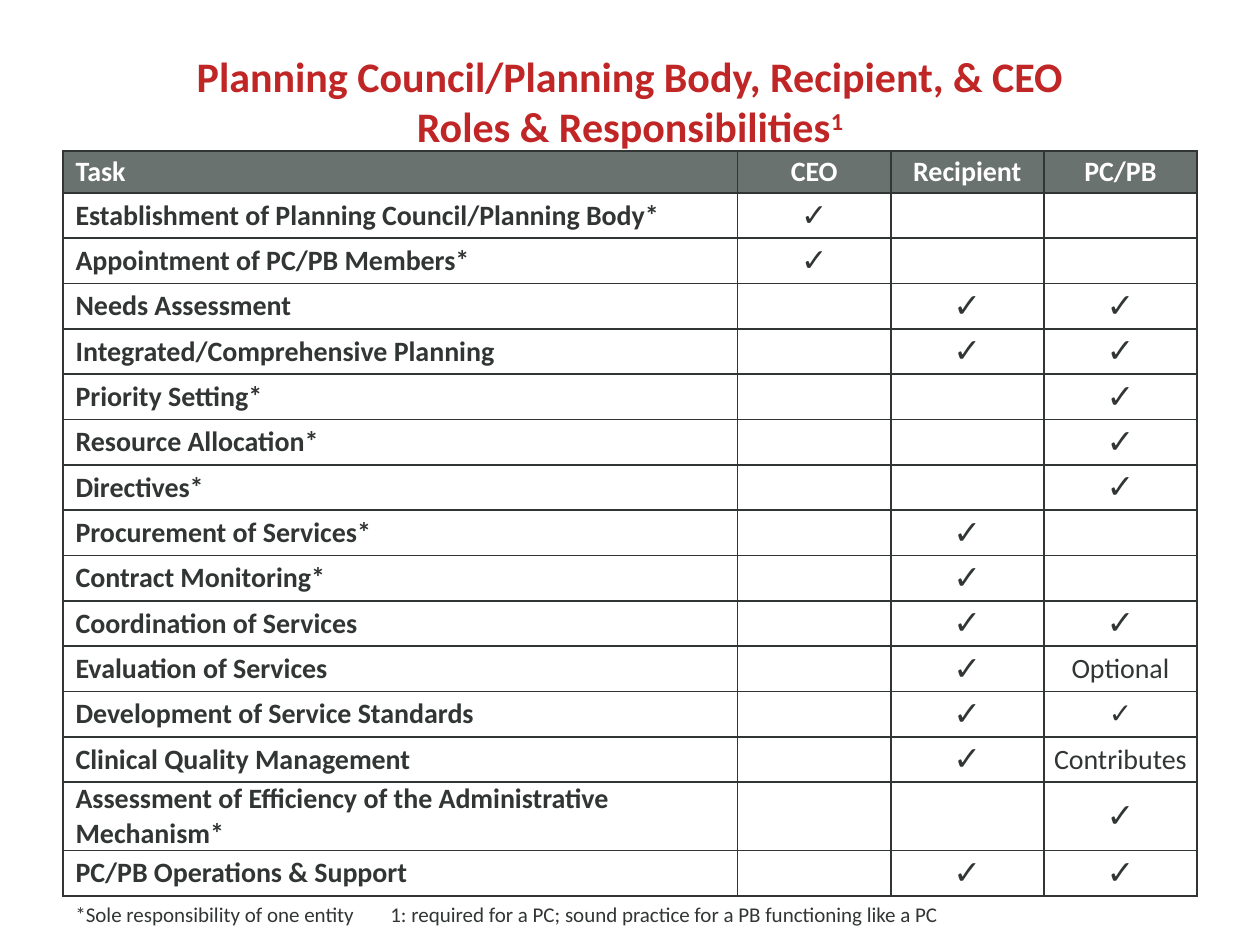
import dataclasses

import pptx
import pptx.dml.color
import pptx.enum.text
import pptx.oxml
import pptx.oxml.ns
import pptx.util

RED = pptx.dml.color.RGBColor(0xBF, 0x26, 0x25)
DARK = pptx.dml.color.RGBColor(0x31, 0x35, 0x34)
SLATE = pptx.dml.color.RGBColor(0x69, 0x72, 0x6F)
WHITE = pptx.dml.color.RGBColor(0xFF, 0xFF, 0xFF)

ANCHOR = pptx.enum.text.MSO_ANCHOR
LEFT = pptx.enum.text.PP_ALIGN.LEFT
CENTER = pptx.enum.text.PP_ALIGN.CENTER

WIDTH = pptx.util.Inches(10)
HEIGHT = pptx.util.Inches(7.5)
MARGIN = 0.05
CONTENT = 1 - 2 * MARGIN
COLUMN_SHARES = (0.595, 0.135, 0.135, 0.135)
HEADER_ROW, TASK_ROW, TALL_ROW = 0.33, 0.36, 0.54
CHECK = "✓"


@dataclasses.dataclass(frozen=True)
class Task:
    name: str
    ceo: str = ""
    recipient: str = ""
    council: str = ""
    mark_size: int = 19
    mark_bold: bool = True
    height: float = TASK_ROW


HEADER = ("Task", "CEO", "Recipient", "PC/PB")
TASKS = (
    Task("Establishment of Planning Council/Planning Body*", ceo=CHECK,
         mark_size=18, mark_bold=False),
    Task("Appointment of PC/PB Members*", ceo=CHECK, mark_size=18, mark_bold=False),
    Task("Needs Assessment", recipient=CHECK, council=CHECK),
    Task("Integrated/Comprehensive Planning", recipient=CHECK, council=CHECK),
    Task("Priority Setting*", council=CHECK),
    Task("Resource Allocation*", council=CHECK),
    Task("Directives*", council=CHECK),
    Task("Procurement of Services*", recipient=CHECK),
    Task("Contract Monitoring*", recipient=CHECK),
    Task("Coordination of Services", recipient=CHECK, council=CHECK),
    Task("Evaluation of Services", recipient=CHECK, council="Optional"),
    Task("Development of Service Standards", recipient=CHECK, council=CHECK),
    Task("Clinical Quality Management", recipient=CHECK, council="Contributes"),
    Task("Assessment of Efficiency of the Administrative Mechanism*",
         council=CHECK, height=TALL_ROW),
    Task("PC/PB Operations & Support", recipient=CHECK, council=CHECK),
)


def set_all(obj, formats: dict) -> None:
    for name, value in formats.items():
        setattr(obj, name, value)


def box(top: float, height: float) -> dict:
    return {"left": int(WIDTH * MARGIN), "top": int(HEIGHT * top),
            "width": int(WIDTH * CONTENT), "height": int(HEIGHT * height)}


def add_run(p, text: str, size: float, color, bold: bool):
    r = p.add_run()
    r.text = text
    set_all(r.font, {"name": "Calibri", "size": pptx.util.Pt(size), "bold": bold})
    r.font.color.rgb = color
    return r


def add_borders(cell) -> None:
    tc_pr = cell._tc.get_or_add_tcPr()
    for i, side in enumerate(("lnL", "lnR", "lnT", "lnB")):
        tc_pr.insert(i, pptx.oxml.parse_xml(
            f'<a:{side} {pptx.oxml.ns.nsdecls("a")} w="{pptx.util.Pt(1)}">'
            f'<a:solidFill><a:srgbClr val="{DARK}"/></a:solidFill></a:{side}>'))


def fill_cell(cell, text: str, column: int, size: float, color, bold: bool, fill) -> None:
    set_all(cell, {
        "margin_left": pptx.util.Inches(0 if column else 0.1),
        "margin_right": 0, "margin_top": 0, "margin_bottom": 0,
        "vertical_anchor": ANCHOR.MIDDLE,
    })
    cell.fill.solid()
    cell.fill.fore_color.rgb = fill
    add_borders(cell)
    p = cell.text_frame.paragraphs[0]
    p.alignment = CENTER if column else LEFT
    if text:
        add_run(p, text, size, color, bold)


def add_title(s) -> None:
    sp = s.shapes.title
    set_all(sp, box(0.04, 0.12))
    tf = sp.text_frame
    set_all(tf, {"word_wrap": True, "vertical_anchor": ANCHOR.BOTTOM,
                 "margin_top": 0, "margin_bottom": 0})
    p = tf.paragraphs[0]
    p.alignment = CENTER
    add_run(p, "Planning Council/Planning Body, Recipient, & CEO", 24, RED, True)
    p.add_line_break()
    add_run(p, "Roles & Responsibilities", 24, RED, True)
    r = add_run(p, "1", 24, RED, True)
    r.font._element.set("baseline", "30000")


def add_task_table(s) -> None:
    heights = [HEADER_ROW] + [task.height for task in TASKS]
    table = s.shapes.add_table(len(heights), len(HEADER), **box(0.16, 0.78)).table
    for column, share in zip(table.columns, COLUMN_SHARES):
        column.width = int(WIDTH * CONTENT * share)
    for row, height in zip(table.rows, heights):
        row.height = pptx.util.Inches(height)
    for c, text in enumerate(HEADER):
        fill_cell(table.cell(0, c), text, c, 16, WHITE, True, SLATE)
    for row, task in enumerate(TASKS, 1):
        fill_cell(table.cell(row, 0), task.name, 0, 16, DARK, True, WHITE)
        for c, mark in enumerate((task.ceo, task.recipient, task.council), 1):
            small = mark not in ("", CHECK) or (
                c == 3 and task.name == "Development of Service Standards")
            size = 16 if small else task.mark_size
            bold = task.mark_bold and not small
            fill_cell(table.cell(row, c), mark, c, size, DARK, bold, WHITE)


def add_footnote(s) -> None:
    tf = s.shapes.add_textbox(**box(0.947, 0.04)).text_frame
    set_all(tf, {"word_wrap": True,
                 "auto_size": pptx.enum.text.MSO_AUTO_SIZE.SHAPE_TO_FIT_TEXT})
    add_run(tf.paragraphs[0],
            "*Sole responsibility of one entity\t"
            "1: required for a PC; sound practice for a PB functioning like a PC",
            12, DARK, False)


def main() -> None:
    prs = pptx.Presentation()
    set_all(prs, {"slide_width": WIDTH, "slide_height": HEIGHT})
    s = prs.slides.add_slide(prs.slide_layouts[5])
    add_title(s)
    add_task_table(s)
    add_footnote(s)
    prs.save("out.pptx")


if __name__ == "__main__":
    main()
